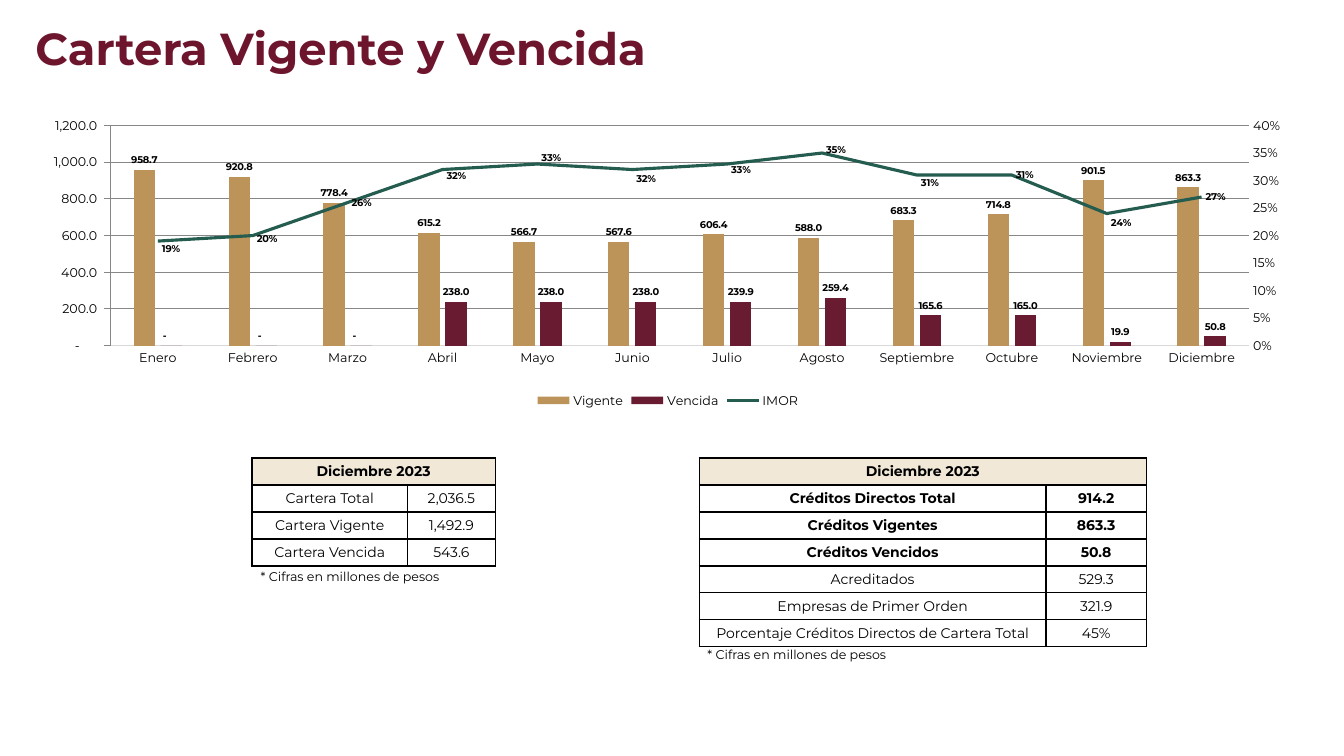
from pptx import Presentation
from pptx.chart.axis import ValueAxis
from pptx.chart.data import CategoryChartData as ChartData
from pptx.dml.color import RGBColor
from pptx.enum.chart import XL_CHART_TYPE as Kind, XL_LABEL_POSITION as Spot
from pptx.enum.chart import XL_LEGEND_POSITION as Side, XL_MARKER_STYLE as Mark
from pptx.enum.chart import XL_TICK_MARK as Tick
from pptx.enum.text import MSO_ANCHOR as Anchor, PP_ALIGN as Align
from pptx.oxml import parse_xml
from pptx.oxml.ns import nsdecls, qn
from pptx.util import Cm, Pt

WINE = RGBColor(0x6E, 0x15, 0x2E)
GOLD = RGBColor(0xBC, 0x94, 0x5A)
PLUM = RGBColor(0x69, 0x1B, 0x31)
GREEN = RGBColor(0x24, 0x5C, 0x4F)
GRAY = RGBColor(0xD9, 0xD9, 0xD9)
CREAM = RGBColor(0xF1, 0xE8, 0xD7)
WHITE = RGBColor(0xFF, 0xFF, 0xFF)
BLACK = RGBColor(0, 0, 0)
MONEY = '_-* #,##0.0_-;\\-* #,##0.0_-;_-* "-"??_-;'


def style(font, size, bold=False, color=BLACK):
    font.name = "Montserrat"
    font.size = Pt(size)
    font.bold = bold
    font.color.rgb = color


def add_text(text, left, top, width, height, size, bold=False, color=BLACK):
    box = slide.shapes.add_textbox(Cm(left), Cm(top), Cm(width), Cm(height))
    frame = box.text_frame
    frame.word_wrap = True
    para = frame.paragraphs[0]
    para.text = text
    style(para.font, size, bold, color)
    return frame


deck = Presentation()
deck.slide_width, deck.slide_height = Cm(33.87), Cm(19.05)
slide = deck.slides.add_slide(deck.slide_layouts[6])

# Title
title = add_text("Cartera Vigente y Vencida", 0.64, 0.41, 27.23, 1.6, 32, True, WINE)
title.vertical_anchor = Anchor.BOTTOM
title.paragraphs[0].line_spacing = 0.9

# Chart data
data = ChartData()
data.categories = ["Enero", "Febrero", "Marzo", "Abril", "Mayo", "Junio", "Julio",
                   "Agosto", "Septiembre", "Octubre", "Noviembre", "Diciembre"]
data.add_series("Vigente", [958.7, 920.8, 778.4, 615.2, 566.7, 567.6, 606.4, 588,
                            683.3, 714.8, 901.5, 863.3], MONEY)
data.add_series("Vencida", [0, 0, 0, 238, 238, 238, 239.9, 259.4,
                            165.6, 165, 19.9, 50.8], MONEY)
data.add_series("IMOR", [0.19, 0.2, 0.26, 0.32, 0.33, 0.32, 0.33, 0.35,
                         0.31, 0.31, 0.24, 0.27], "0%")
chart = slide.shapes.add_chart(Kind.COLUMN_CLUSTERED, Cm(0.94), Cm(2.62), Cm(31.78),
                               Cm(7.77), data).chart
chart.has_title = False
style(chart.font, 9)
chart.has_legend = True
chart.legend.position = Side.BOTTOM
chart.legend.include_in_layout = False
style(chart.legend.font, 9)

bars = chart.plots[0]
bars.gap_width, bars.overlap = 219, -27
bars.vary_by_categories = False

# IMOR moves to a line plot with its own axes
area = chart.element.find(".//" + qn("c:plotArea"))
rate = area.findall(".//" + qn("c:ser"))[2]
for flip in rate.findall(qn("c:invertIfNegative")):
    rate.remove(flip)
line = parse_xml(f'''<c:lineChart {nsdecls("c")}><c:grouping val="standard"/>
<c:varyColors val="0"/><c:marker val="1"/><c:axId val="501"/><c:axId val="502"/>
</c:lineChart>''')
line.insert(2, rate)
area.find(qn("c:barChart")).addnext(line)
for tag, own, other, side, gone, cross in (("valAx", 502, 501, "r", 0, "max"),
                                           ("catAx", 501, 502, "b", 1, "autoZero")):
    area.append(parse_xml(f'''<c:{tag} {nsdecls("c")}><c:axId val="{own}"/>
<c:scaling><c:orientation val="minMax"/></c:scaling><c:delete val="{gone}"/>
<c:axPos val="{side}"/><c:majorTickMark val="out"/><c:minorTickMark val="none"/>
<c:tickLblPos val="nextTo"/><c:crossAx val="{other}"/><c:crosses val="{cross}"/>
</c:{tag}>'''))

# Plot frame
for old in area.findall(qn("c:layout")):
    area.remove(old)
area.insert(0, parse_xml(f'''<c:layout {nsdecls("c")}><c:manualLayout>
<c:layoutTarget val="inner"/><c:xMode val="edge"/><c:yMode val="edge"/>
<c:x val="0.058"/><c:y val="0.07"/><c:w val="0.903"/><c:h val="0.714"/>
</c:manualLayout></c:layout>'''))

# Axes
right = ValueAxis(area.findall(qn("c:valAx"))[1])
for axis, top, step, code in ((chart.value_axis, 1200, 200, MONEY),
                              (right, 0.4, 0.05, "0%")):
    axis.minimum_scale, axis.maximum_scale, axis.major_unit = 0, top, step
    axis.tick_labels.number_format = code
    axis.tick_labels.number_format_is_linked = False
    axis.format.line.fill.background()
    style(axis.tick_labels.font, 9)
chart.value_axis.major_tick_mark = Tick.NONE
grid = chart.value_axis.major_gridlines.format.line
months = chart.category_axis
months.major_tick_mark = Tick.NONE
style(months.tick_labels.font, 9)
for rule in (grid, months.format.line):
    rule.color.rgb = GRAY
    rule.width = Pt(0.75)

# Series colours and labels
imor = chart.plots[1].series[0]
for ser, color, code, spot in ((bars.series[0], GOLD, MONEY, Spot.OUTSIDE_END),
                               (bars.series[1], PLUM, MONEY, Spot.OUTSIDE_END),
                               (imor, GREEN, "0%", Spot.RIGHT)):
    if ser is imor:
        ser.format.line.color.rgb = color
        ser.format.line.width = Pt(2.25)
        ser.marker.style = Mark.NONE
        ser.smooth = False
    else:
        ser.format.fill.solid()
        ser.format.fill.fore_color.rgb = color
    tags = ser.data_labels
    tags.show_value = True
    tags.number_format = code
    tags.number_format_is_linked = False
    tags.position = spot
    style(tags.font, 7, True)

# Rate labels shifted up or down from the line
shifts = {0: 0.025, 1: 0.01, 3: 0.02, 4: -0.02, 5: 0.03, 6: 0.02, 7: -0.01,
          8: 0.025, 10: 0.03}
for num, shift in shifts.items():
    tag = imor.points[num].data_label
    style(tag.font, 7, True)
    tag.position = Spot.RIGHT
for node in rate.iter(qn("c:dLbl")):
    shift = shifts[int(node.find(qn("c:idx")).get("val"))]
    node.insert(1, parse_xml(f'''<c:layout {nsdecls("c")}><c:manualLayout>
<c:x val="0"/><c:y val="{shift}"/></c:manualLayout></c:layout>'''))
    node.insert(2, parse_xml(f'<c:numFmt {nsdecls("c")} formatCode="0%" sourceLinked="0"/>'))

# Tables: left edge, column widths, count of bold rows, rows
total = [("Cartera Total", "2,036.5"), ("Cartera Vigente", "1,492.9"),
         ("Cartera Vencida", "543.6")]
direct = [("Créditos Directos Total", "914.2"), ("Créditos Vigentes", "863.3"),
          ("Créditos Vencidos", "50.8"), ("Acreditados", "529.3"),
          ("Empresas de Primer Orden", "321.9"),
          ("Porcentaje Créditos Directos de Cartera Total", "45%")]
HIGH = 0.68
for left, widths, strong, rows in ((6.35, (3.92, 2.21), 1, total),
                                   (17.62, (8.74, 2.53), 4, direct)):
    rows = [("Diciembre 2023", "")] + rows
    table = slide.shapes.add_table(len(rows), 2, Cm(left), Cm(11.54), Cm(sum(widths)),
                                   Cm(HIGH * len(rows))).table
    for col, width in zip(table.columns, widths):
        col.width = Cm(width)
    table.cell(0, 0).merge(table.cell(0, 1))
    for r, row in enumerate(rows):
        table.rows[r].height = Cm(HIGH)
        for c, text in enumerate(row):
            cell = table.cell(r, c)
            cell.margin_top = cell.margin_bottom = Cm(0.05)
            cell.vertical_anchor = Anchor.MIDDLE
            para = cell.text_frame.paragraphs[0]
            para.text = text
            para.alignment = Align.CENTER
            style(para.font, 10, r < strong)
            props = cell._tc.get_or_add_tcPr()
            for edge in "LRTB":
                props.append(parse_xml(f'''<a:ln{edge} {nsdecls("a")} w="12700"><a:solidFill>
<a:srgbClr val="{BLACK}"/></a:solidFill></a:ln{edge}>'''))
            cell.fill.solid()
            cell.fill.fore_color.rgb = WHITE if r else CREAM

# Notes under the tables
for left, top in ((6.32, 14.2), (17.58, 16.18)):
    add_text("* Cifras en millones de pesos", left, top, 6.12, 0.64, 9)

deck.save("out.pptx")
